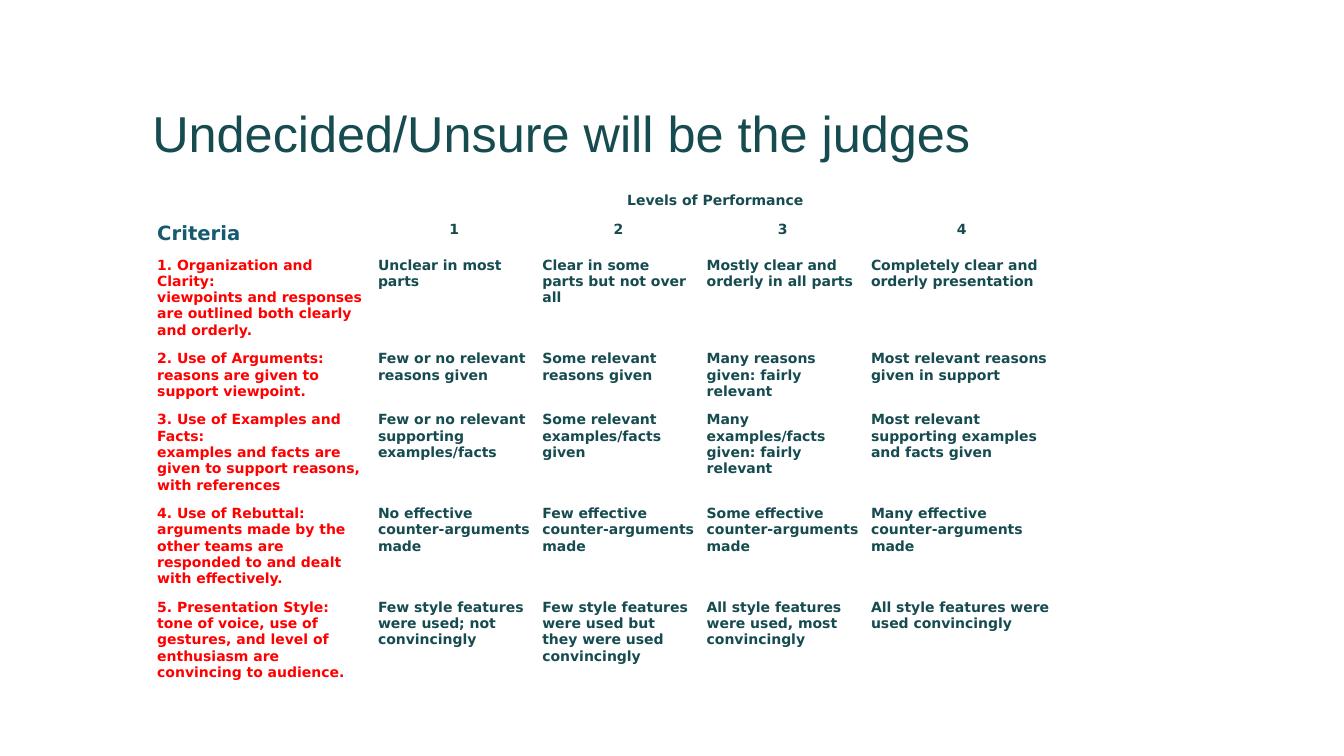
"""Build the debate judging rubric slide."""
from dataclasses import dataclass

from pptx import Presentation
from pptx.dml.color import RGBColor as RGB
from pptx.enum.text import MSO_ANCHOR as ANCHOR, PP_ALIGN as ALIGN
from pptx.table import _Cell as Cell
from pptx.util import Emu, Inches, Pt

W, H = Inches(13.33), Inches(7.5)
COLORS = {"paper": "FFFFFF", "ink": "164B4F", "heading": "175A6F", "criterion": "FF0000"}
TITLE_FONT, TABLE_FONT = "Arial", "DejaVu Sans"
COLUMNS = [16.43, 12.23, 12.23, 12.23, 14.4]
ROWS = [3.87, 4.67, 12.4, 8, 12.4, 12.4, 12.4]


@dataclass(frozen=True)
class Criterion:
    name: str
    detail: str
    levels: tuple[str, str, str, str]


CRITERIA = [
    Criterion("1. Organization and Clarity:",
              "viewpoints and responses are outlined both clearly and orderly.",
              ("Unclear in most parts", "Clear in some parts but not over all",
               "Mostly clear and orderly in all parts",
               "Completely clear and orderly presentation")),
    Criterion("2. Use of Arguments:", "reasons are given to support viewpoint.",
              ("Few or no relevant reasons given", "Some relevant reasons given",
               "Many reasons given: fairly relevant",
               "Most relevant reasons given in support")),
    Criterion("3. Use of Examples and Facts:",
              "examples and facts are given to support reasons, with references",
              ("Few or no relevant supporting examples/facts",
               "Some relevant examples/facts given",
               "Many examples/facts given: fairly relevant",
               "Most relevant supporting examples and facts given")),
    Criterion("4. Use of Rebuttal:",
              "arguments made by the other teams are responded to and dealt with effectively.",
              ("No effective counter-arguments made", "Few effective counter-arguments made",
               "Some effective counter-arguments made",
               "Many effective counter-arguments made")),
    Criterion("5. Presentation Style:",
              "tone of voice, use of gestures, and level of enthusiasm are convincing to audience.",
              ("Few style features were used; not convincingly",
               "Few style features were used but they were used convincingly",
               "All style features were used, most convincingly",
               "All style features were used convincingly")),
]


def across(percent: float) -> Emu:
    return Emu(round(W * percent / 100))


def down(percent: float) -> Emu:
    return Emu(round(H * percent / 100))


def write(cell: Cell, text: str, color: str = "ink", size: int = 10,
          align: ALIGN = ALIGN.LEFT) -> None:
    cell.text = text
    for p in cell.text_frame.paragraphs:
        p.alignment = align
        p.font.name, p.font.size, p.font.bold = TABLE_FONT, Pt(size), True
        p.font.color.rgb = RGB.from_string(COLORS[color])


def add_title(s, text: str) -> None:
    title = s.shapes.title
    title.left, title.top = across(10.58), down(5.6)
    title.width, title.height = across(78.77), down(16.67)
    tf = title.text_frame
    tf.text, tf.word_wrap, tf.vertical_anchor = text, True, ANCHOR.BOTTOM
    p = tf.paragraphs[0]
    p.alignment, p.line_spacing = ALIGN.LEFT, 0.9
    p.font.name, p.font.size = TITLE_FONT, Pt(36)
    p.font.color.rgb = RGB.from_string(COLORS["ink"])


def add_rubric(s) -> None:
    table = s.shapes.add_table(len(ROWS), len(COLUMNS), across(11.25), down(24.67),
                               across(sum(COLUMNS)), down(sum(ROWS))).table
    table.first_row = table.horz_banding = False
    for column, share in zip(table.columns, COLUMNS):
        column.width = across(share)
    for row, share in zip(table.rows, ROWS):
        row.height = down(share)
    for cell in table.iter_cells():
        cell.fill.background()
        cell.margin_left = cell.margin_right = Inches(0.06)
        cell.margin_top = cell.margin_bottom = Inches(0.06)
        cell.text_frame.paragraphs[0]._p.get_or_add_endParaRPr().set("sz", "1000")

    table.cell(0, 1).merge(table.cell(0, 4))
    write(table.cell(0, 1), "Levels of Performance", align=ALIGN.CENTER)
    write(table.cell(1, 0), "Criteria", "heading", 14)
    for level in range(1, 5):
        write(table.cell(1, level), str(level), align=ALIGN.CENTER)
    for row, criterion in enumerate(CRITERIA, 2):
        write(table.cell(row, 0), f"{criterion.name}\n{criterion.detail}", "criterion")
        for col, text in enumerate(criterion.levels, 1):
            write(table.cell(row, col), text)


def main() -> None:
    prs = Presentation()
    prs.slide_width, prs.slide_height = W, H
    s = prs.slides.add_slide(prs.slide_layouts[5])
    s.background.fill.solid()
    s.background.fill.fore_color.rgb = RGB.from_string(COLORS["paper"])
    add_title(s, "Undecided/Unsure will be the judges")
    add_rubric(s)
    prs.save("out.pptx")


if __name__ == "__main__":
    main()
